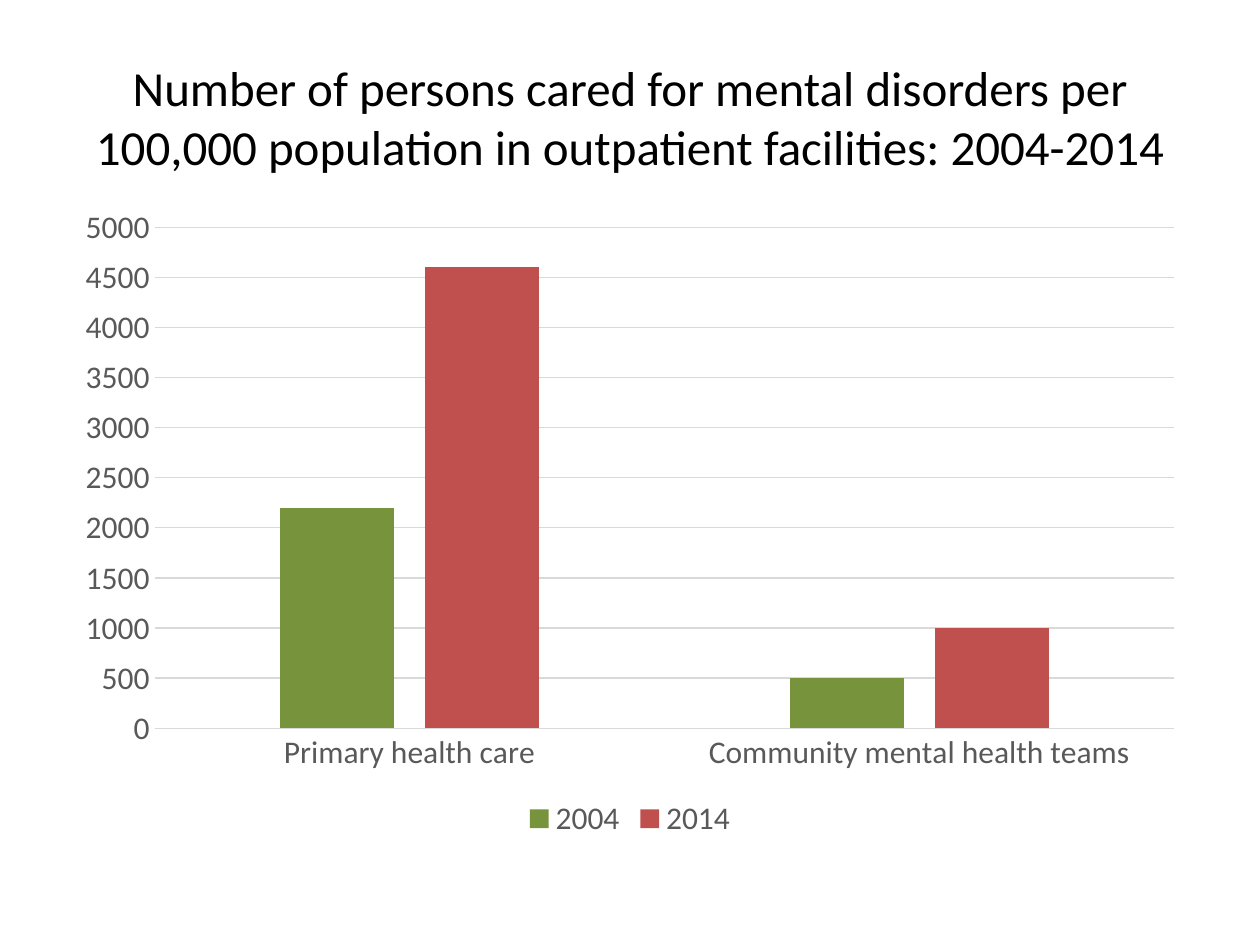
from pptx import Presentation
from pptx.chart.data import CategoryChartData
from pptx.dml.color import RGBColor
from pptx.enum.chart import XL_CHART_TYPE, XL_LEGEND_POSITION, XL_TICK_MARK
from pptx.enum.text import MSO_ANCHOR, PP_ALIGN
from pptx.util import Pt

COLUMNS = XL_CHART_TYPE.COLUMN_CLUSTERED
LEGEND_BOTTOM = XL_LEGEND_POSITION.BOTTOM
NO_TICK = XL_TICK_MARK.NONE
MIDDLE = MSO_ANCHOR.MIDDLE
CENTER = PP_ALIGN.CENTER

FONT = "Calibri"
BLACK, GREY, LIGHT = "000000", "595959", "D9D9D9"

TITLE = ("Number of persons cared for mental disorders per 100,000 population "
         "in outpatient facilities: 2004-2014")
FACILITIES = ["Primary health care", "Community mental health teams"]
YEARS = [("2004", (2200, 500), "77933C"), ("2014", (4600, 1000), "C0504D")]


def rgb(value):
    return RGBColor.from_string(value)


def set_font(font, size, color):
    font.name = FONT
    font.size = Pt(size)
    font.color.rgb = rgb(color)


def set_line(line, color):
    line.color.rgb = rgb(color)
    line.width = Pt(0.75)


def add_title(s, x, y, w, h):
    sp = s.shapes.title
    sp.left, sp.top, sp.width, sp.height = Pt(x), Pt(y), Pt(w), Pt(h)
    tf = sp.text_frame
    tf.word_wrap = True
    tf.vertical_anchor = MIDDLE
    p = tf.paragraphs[0]
    p.alignment = CENTER
    r = p.add_run()
    r.text = TITLE
    set_font(r.font, 28, BLACK)


def add_outpatient_chart(s, x, y, w, h):
    data = CategoryChartData()
    data.categories = FACILITIES
    for year, values, _ in YEARS:
        data.add_series(year, values)
    chart = s.shapes.add_chart(COLUMNS, Pt(x), Pt(y), Pt(w), Pt(h), data).chart
    chart.has_title = False
    set_font(chart.font, 10, BLACK)

    # Columns
    plot = chart.plots[0]
    plot.gap_width, plot.overlap = 219, -27
    plot.vary_by_categories = False
    for series, (_, _, color) in zip(plot.series, YEARS):
        series.invert_if_negative = False
        series.format.fill.solid()
        series.format.fill.fore_color.rgb = rgb(color)

    # Axes and gridlines
    for axis in (chart.category_axis, chart.value_axis):
        axis.major_tick_mark = axis.minor_tick_mark = NO_TICK
        set_font(axis.tick_labels.font, 18, GREY)
    set_line(chart.category_axis.format.line, LIGHT)
    value_axis = chart.value_axis
    value_axis.minimum_scale, value_axis.maximum_scale = 0, 5000
    value_axis.major_unit = 500
    value_axis.format.line.fill.background()
    set_line(value_axis.major_gridlines.format.line, LIGHT)

    # Legend
    chart.has_legend = True
    chart.legend.position = LEGEND_BOTTOM
    chart.legend.include_in_layout = False
    set_font(chart.legend.font, 18, GREY)


def main():
    prs = Presentation()
    prs.slide_width, prs.slide_height = Pt(720), Pt(540)
    s = prs.slides.add_slide(prs.slide_layouts[5])
    add_title(s, 36, 21.6, 648, 90)
    add_outpatient_chart(s, 36, 111.6, 648, 370.8)
    prs.save("out.pptx")


if __name__ == "__main__":
    main()
